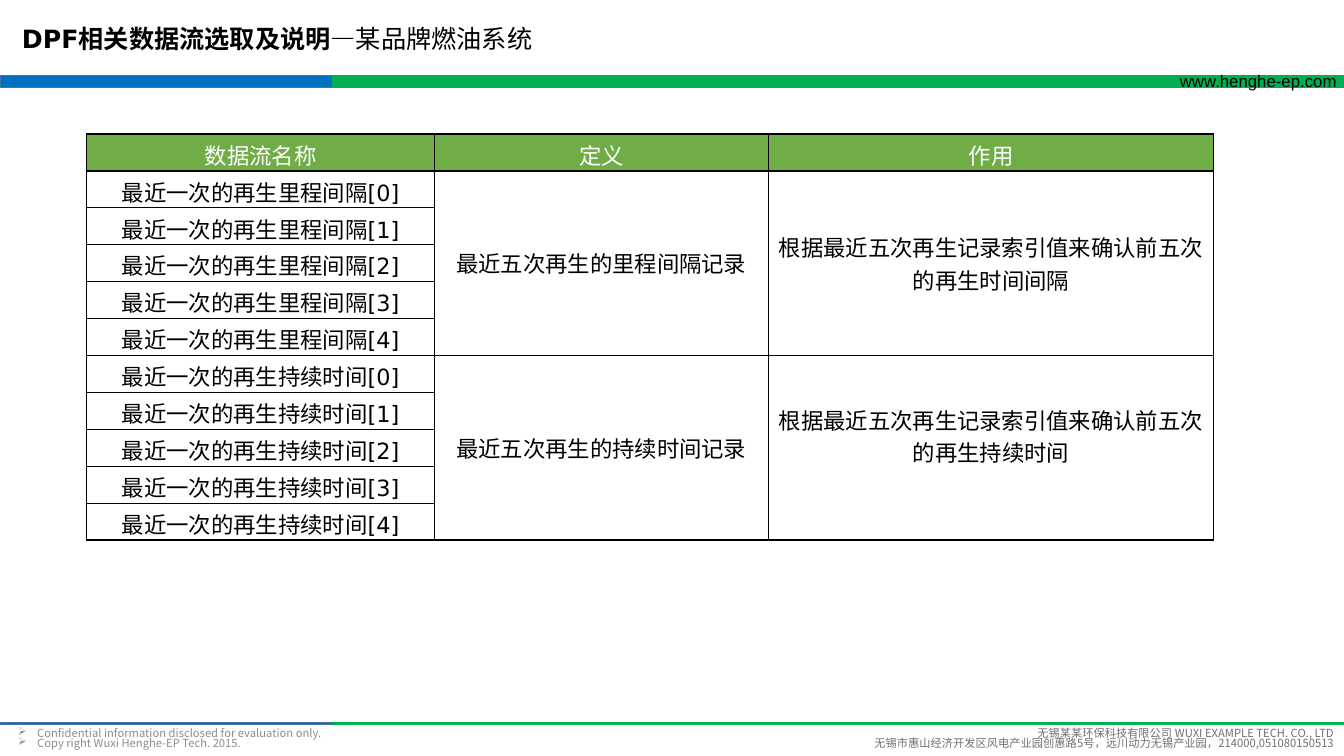
from dataclasses import dataclass

from lxml import etree
from pptx import Presentation
from pptx.dml.color import RGBColor
from pptx.enum.shapes import MSO_SHAPE
from pptx.enum.text import MSO_ANCHOR, PP_ALIGN
from pptx.oxml.ns import qn
from pptx.util import Inches, Pt

RECTANGLE = MSO_SHAPE.RECTANGLE
MIDDLE, TOP = MSO_ANCHOR.MIDDLE, MSO_ANCHOR.TOP
LEFT, CENTER, RIGHT = PP_ALIGN.LEFT, PP_ALIGN.CENTER, PP_ALIGN.RIGHT


@dataclass(frozen=True)
class Theme:
    black: str = "000000"
    white: str = "FFFFFF"
    blue: str = "0070C0"
    blue_edge: str = "476FAA"
    green: str = "00B050"
    header: str = "70AD47"
    notice: str = "8C8C8C"
    address: str = "707070"
    body_font: str = "DejaVu Sans"
    footer_font: str = "Noto Sans CJK SC"
    web_font: str = "Arial"
    title_size: int = 18
    table_size: int = 16
    web_size: int = 12
    footer_size: int = 8


THEME = Theme()


def rgb(code):
    return RGBColor.from_string(code)


def style(para, font, size, color, align=LEFT):
    para.alignment = align
    para.font.name = font
    para.font.size = Pt(size)
    para.font.color.rgb = rgb(color)


def add_text_frame(page, left, top, width, height, anchor=TOP):
    box = page.shapes.add_textbox(Inches(left), Inches(top), Inches(width), Inches(height))
    frame = box.text_frame
    frame.word_wrap = True
    frame.vertical_anchor = anchor
    return frame


def add_arrow_bullet(para):
    props = para._p.get_or_add_pPr()
    props.set("marL", str(Inches(0.19)))
    props.set("indent", str(-Inches(0.19)))
    etree.SubElement(props, qn("a:buChar")).set("char", "➢")


def add_band(page, left, top, width, height):
    """Two-colour rule: a short blue part, then a long green part."""
    split = 3.3
    parts = ((left, split - left, THEME.blue, THEME.blue_edge),
             (split, width - split, THEME.green, THEME.green))
    for start, length, fill, edge in parts:
        bar = page.shapes.add_shape(RECTANGLE, Inches(start), Inches(top),
                                    Inches(length), Inches(height))
        bar.shadow.inherit = False
        bar.fill.solid()
        bar.fill.fore_color.rgb = rgb(fill)
        bar.line.color.rgb = rgb(edge)
        bar.line.width = Pt(1)


def add_header(page, left, top, width):
    add_band(page, left, top + 0.75, width, 0.12)

    # Web address over the green bar
    para = add_text_frame(page, left + 11.24, top + 0.65, 2.48, 0.3, MIDDLE).paragraphs[0]
    para.text = "www.henghe-ep.com"
    style(para, THEME.web_font, THEME.web_size, THEME.black, CENTER)

    # Title with a bold lead
    para = add_text_frame(page, left + 0.12, top + 0.18, 12.5, 0.4, MIDDLE).paragraphs[0]
    for text, bold in (("DPF相关数据流选取及说明—", True), ("某品牌燃油系统", False)):
        span = para.add_run()
        span.text = text
        span.font.bold = bold
    style(para, THEME.body_font, THEME.title_size, THEME.black)


def add_footer(page, left, top, width):
    add_band(page, left, top, width, 0.02)
    notice = ("Confidential information disclosed for evaluation only.",
              "Copy right Wuxi Henghe-EP Tech. 2015.")
    address = ("无锡某某环保科技有限公司 WUXI EXAMPLE TECH. CO., LTD",
               "无锡市惠山经济开发区风电产业园创惠路5号，远川动力无锡产业园，214000,051080150513")
    blocks = ((left + 0.08, notice, THEME.notice, LEFT, True),
              (left + width - 7.1, address, THEME.address, RIGHT, False))
    for start, lines, color, align, bulleted in blocks:
        frame = add_text_frame(page, start, top + 0.01, 7.1, 0.37)
        for number, line in enumerate(lines):
            para = frame.add_paragraph() if number else frame.paragraphs[0]
            para.text = line
            para.line_spacing = 0.8
            if bulleted:
                add_arrow_bullet(para)
            style(para, THEME.footer_font, THEME.footer_size, color, align)


def format_cell(cell, fill):
    """Thin black borders first, as the fill must follow them."""
    props = cell._tc.get_or_add_tcPr()
    for side in ("a:lnL", "a:lnR", "a:lnT", "a:lnB"):
        border = etree.SubElement(props, qn(side), w=str(Pt(1)))
        solid = etree.SubElement(border, qn("a:solidFill"))
        etree.SubElement(solid, qn("a:srgbClr"), val=THEME.black)
    cell.fill.solid()
    cell.fill.fore_color.rgb = rgb(fill)
    cell.vertical_anchor = MIDDLE
    cell.margin_left = cell.margin_right = Inches(0.08)
    cell.margin_top, cell.margin_bottom = Inches(0.04), 0
    style(cell.text_frame.paragraphs[0], THEME.body_font, THEME.table_size,
          THEME.white if fill == THEME.header else THEME.black, CENTER)


def add_data_table(page, left, top, width, height):
    headings = ("数据流名称", "定义", "作用")
    groups = (("里程间隔", "时间间隔", 0), ("持续时间", "持续时间", 0.24))
    records = 5
    row_count = 1 + records * len(groups)
    frame = page.shapes.add_table(row_count, len(headings), Inches(left), Inches(top),
                                  Inches(width), Inches(height))
    table = frame.table
    for column, share in zip(table.columns, (3.45, 3.31, 4.42)):
        column.width = Inches(share)
    for row in table.rows:
        row.height = Inches(height / row_count)

    # Wording
    for column, heading in enumerate(headings):
        table.cell(0, column).text = heading
    for number, (measure, purpose, _) in enumerate(groups):
        first = 1 + number * records
        for index in range(records):
            table.cell(first + index, 0).text = f"最近一次的再生{measure}[{index}]"
        table.cell(first, 1).text = f"最近五次再生的{measure}记录"
        table.cell(first, 2).text = f"根据最近五次再生记录索引值来确认前五次的再生{purpose}"

    # Look of every cell
    for row in range(row_count):
        for column in range(len(headings)):
            format_cell(table.cell(row, column), THEME.white if row else THEME.header)

    # One definition and one purpose for each group of records
    for number, (_, _, lift) in enumerate(groups):
        first = 1 + number * records
        for column in (1, 2):
            table.cell(first, column).merge(table.cell(first + records - 1, column))
            table.cell(first, column).margin_top = 0
        table.cell(first, 2).margin_bottom = Inches(lift)


def main():
    deck = Presentation()
    deck.slide_width, deck.slide_height = Inches(13.33), Inches(7.5)
    page = deck.slides.add_slide(deck.slide_layouts[6])
    add_footer(page, 0, 7.17, 13.33)
    add_header(page, 0, 0, 13.33)
    add_data_table(page, 0.86, 1.33, 11.18, 4.03)
    deck.save("out.pptx")


if __name__ == "__main__":
    main()
